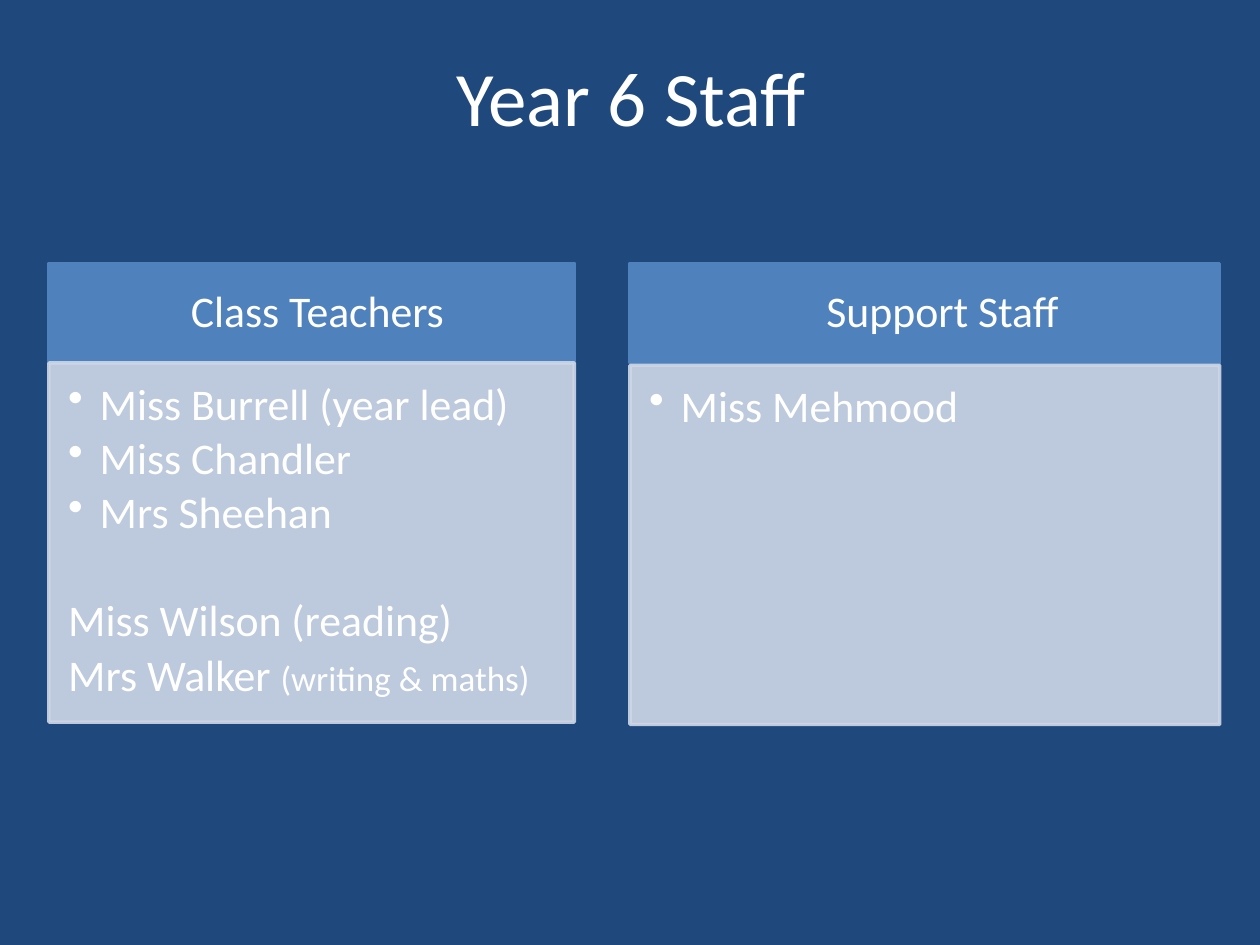
from dataclasses import dataclass

from lxml import etree
from pptx import Presentation
from pptx.dml.color import RGBColor
from pptx.enum.shapes import MSO_SHAPE
from pptx.enum.text import MSO_ANCHOR, PP_ALIGN
from pptx.oxml.ns import qn
from pptx.util import Pt

RECTANGLE = MSO_SHAPE.RECTANGLE
MIDDLE, TOP = MSO_ANCHOR.MIDDLE, MSO_ANCHOR.TOP
CENTER, LEFT = PP_ALIGN.CENTER, PP_ALIGN.LEFT

COLORS = {"background": "1F497D", "header": "4F81BD", "body": "CFD7E7", "text": "FFFFFF"}
FONT = "Calibri"
TEXT_SIZE = 25
HEADER_TOP, HEADER_HEIGHT, BODY_HEIGHT = 150.5, 57, 205.2
HEADER_INSET, BODY_INSET = 8, 11
BULLET_INDENT = 18


@dataclass
class Member:
    name: str
    note: str = ""
    bullet: bool = True
    space_before: float = 4


@dataclass
class Column:
    heading: str
    left: float
    width: float
    body_top: float
    heading_shift: float  # extra left inset of the heading
    members: list[Member]


COLUMNS = [
    Column("Class Teachers", 28, 300.2, 207.4, 6.5, [
        Member("Miss Burrell (year lead)"),
        Member("Miss Chandler"),
        Member("Mrs Sheehan"),
        Member("Miss Wilson (reading)", bullet=False, space_before=35),
        Member("Mrs Walker ", note="(writing & maths)", bullet=False),
    ]),
    Column("Support Staff", 360, 337, 208.8, 20, [Member("Miss Mehmood")]),
]


def color(name: str) -> RGBColor:
    return RGBColor.from_string(COLORS[name])


def style_run(run, size: float) -> None:
    run.font.name = FONT
    run.font.size = Pt(size)
    run.font.color.rgb = color("text")


def set_frame(text_frame, inset: float, anchor, left_shift: float = 0) -> None:
    text_frame.word_wrap = True
    text_frame.vertical_anchor = anchor
    text_frame.margin_left = Pt(inset + left_shift)
    text_frame.margin_right = text_frame.margin_top = text_frame.margin_bottom = Pt(inset)


def set_paragraph(paragraph, alignment, space_before: float) -> None:
    paragraph.alignment = alignment
    paragraph.line_spacing = 0.9
    paragraph.space_before = Pt(space_before)


def set_bullet(paragraph, bullet: bool) -> None:
    properties = paragraph._p.get_or_add_pPr()
    indent = Pt(BULLET_INDENT) if bullet else 0
    properties.set("marL", str(indent))
    properties.set("indent", str(-indent))
    if bullet:
        etree.SubElement(properties, qn("a:buChar"), char="•")


def add_box(slide, left: float, top: float, width: float, height: float,
            color_name: str, opacity: int = 100):
    shape = slide.shapes.add_shape(RECTANGLE, Pt(left), Pt(top), Pt(width), Pt(height))
    shape.shadow.inherit = False
    shape.fill.solid()
    shape.fill.fore_color.rgb = color(color_name)
    shape.line.color.rgb = color(color_name)
    shape.line.width = Pt(2)
    if opacity < 100:
        for element in shape._element.spPr.iter(qn("a:srgbClr")):
            etree.SubElement(element, qn("a:alpha"), val=str(opacity * 1000))
    return shape


def add_title(slide, text: str) -> None:
    shape = slide.shapes.add_textbox(Pt(36.7), Pt(9.4), Pt(648), Pt(90))
    set_frame(shape.text_frame, 3.6, MIDDLE)
    shape.text_frame.text = text
    paragraph = shape.text_frame.paragraphs[0]
    paragraph.alignment = CENTER
    style_run(paragraph.runs[0], 44)


def add_column(slide, column: Column) -> None:
    # Heading bar
    header = add_box(slide, column.left, HEADER_TOP, column.width, HEADER_HEIGHT, "header")
    set_frame(header.text_frame, HEADER_INSET, MIDDLE, column.heading_shift)
    header.text_frame.text = column.heading
    paragraph = header.text_frame.paragraphs[0]
    set_paragraph(paragraph, CENTER, 10)
    style_run(paragraph.runs[0], TEXT_SIZE)

    # Translucent panel with the staff list
    body = add_box(slide, column.left, column.body_top, column.width, BODY_HEIGHT, "body", 90)
    set_frame(body.text_frame, BODY_INSET, TOP)
    body.text_frame.text = "\n".join(member.name for member in column.members)
    for paragraph, member in zip(body.text_frame.paragraphs, column.members):
        paragraph.level = 1
        set_paragraph(paragraph, LEFT, member.space_before)
        set_bullet(paragraph, member.bullet)
        style_run(paragraph.runs[0], TEXT_SIZE)
        if member.note:
            note = paragraph.add_run()
            note.text = member.note
            style_run(note, 20)


def main() -> None:
    presentation = Presentation()
    presentation.slide_width, presentation.slide_height = Pt(720), Pt(540)
    slide = presentation.slides.add_slide(presentation.slide_layouts[6])
    slide.background.fill.solid()
    slide.background.fill.fore_color.rgb = color("background")

    add_title(slide, "Year 6 Staff")
    for column in COLUMNS:
        add_column(slide, column)
    presentation.save("out.pptx")


if __name__ == "__main__":
    main()
